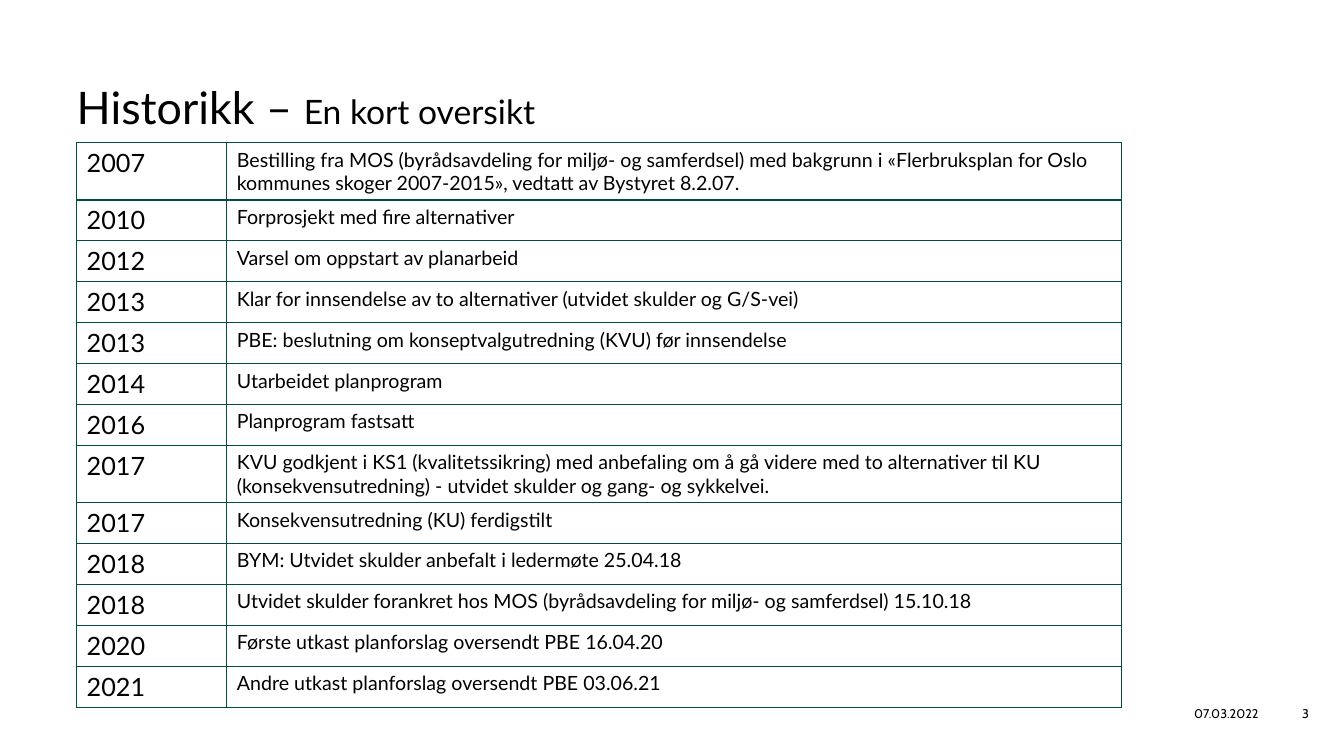
import pptx
import pptx.dml.color
import pptx.enum.text
import pptx.oxml
import pptx.oxml.ns
import pptx.util

PX = 9525
BLACK = pptx.dml.color.RGBColor(0x00, 0x00, 0x00)
WHITE = pptx.dml.color.RGBColor(0xFF, 0xFF, 0xFF)
GREEN = pptx.dml.color.RGBColor(0x03, 0x4B, 0x45)

SLIDE_SIZE = (1280, 720)
TITLE = [("Historikk – ", 32), ("En kort oversikt", 24)]
TITLE_BOX = (73, 76, 995, 74)
HISTORY = [
    ("2007", "Bestilling fra MOS (byrådsavdeling for miljø- og samferdsel) med bakgrunn i "
             "«Flerbruksplan for Oslo kommunes skoger 2007-2015», vedtatt av Bystyret 8.2.07."),
    ("2010", "Forprosjekt med fire alternativer"),
    ("2012", "Varsel om oppstart av planarbeid"),
    ("2013", "Klar for innsendelse av to alternativer (utvidet skulder og G/S-vei)"),
    ("2013", "PBE: beslutning om konseptvalgutredning (KVU) før innsendelse"),
    ("2014", "Utarbeidet planprogram"),
    ("2016", "Planprogram fastsatt"),
    ("2017", "KVU godkjent i KS1 (kvalitetssikring) med anbefaling om å gå videre med to "
             "alternativer til KU (konsekvensutredning) - utvidet skulder og gang- og sykkelvei."),
    ("2017", "Konsekvensutredning (KU) ferdigstilt"),
    ("2018", "BYM: Utvidet skulder anbefalt i ledermøte 25.04.18"),
    ("2018", "Utvidet skulder forankret hos MOS (byrådsavdeling for miljø- og samferdsel) 15.10.18"),
    ("2020", "Første utkast planforslag oversendt PBE 16.04.20"),
    ("2021", "Andre utkast planforslag oversendt PBE 03.06.21"),
]
HISTORY_LEFT, HISTORY_TOP = 73, 136
COLUMN_WIDTHS = (143, 852)
COLUMN_SIZES = (18, 14)
ROW_HEIGHT, TWO_LINE_HEIGHT = 39, 54
CHARACTERS_PER_LINE = 110
FOOTER = [
    ("07.03.2022", (1067, 660, 141, 38), pptx.enum.text.PP_ALIGN.RIGHT),
    ("3", (1207, 660, 73, 38), pptx.enum.text.PP_ALIGN.CENTER),
]


def emu(lengths):
    return [length * PX for length in lengths]


def set_font(paragraph, name, size=None):
    paragraph.font.name = name
    paragraph.font.color.rgb = BLACK
    if size:
        paragraph.font.size = pptx.util.Pt(size)


def add_borders(cell):
    """Draw a thin green line on all four sides of the cell."""
    properties = cell._tc.get_or_add_tcPr()
    for position, side in enumerate(("lnL", "lnR", "lnT", "lnB")):
        properties.insert(position, pptx.oxml.parse_xml(
            f'<a:{side} {pptx.oxml.ns.nsdecls("a")} w="{pptx.util.Pt(1)}">'
            f'<a:solidFill><a:srgbClr val="{GREEN}"/></a:solidFill></a:{side}>'))


def add_title(slide):
    title = slide.shapes.title
    title.left, title.top, title.width, title.height = emu(TITLE_BOX)
    frame = title.text_frame
    frame.margin_left = frame.margin_top = frame.margin_right = frame.margin_bottom = 0
    frame.vertical_anchor = pptx.enum.text.MSO_ANCHOR.TOP
    frame.auto_size = pptx.enum.text.MSO_AUTO_SIZE.NONE
    heading = frame.paragraphs[0]
    heading.alignment = pptx.enum.text.PP_ALIGN.LEFT
    set_font(heading, "Lato")
    for words, size in TITLE:
        run = heading.add_run()
        run.text = words
        run.font.size = pptx.util.Pt(size)


def add_history(slide):
    heights = [TWO_LINE_HEIGHT if len(event) > CHARACTERS_PER_LINE else ROW_HEIGHT
               for _, event in HISTORY]
    box = emu((HISTORY_LEFT, HISTORY_TOP, sum(COLUMN_WIDTHS), sum(heights)))
    history = slide.shapes.add_table(len(HISTORY), len(COLUMN_WIDTHS), *box).table
    history.first_row = history.horz_banding = False
    for column, width in zip(history.columns, emu(COLUMN_WIDTHS)):
        column.width = width
    for row, height, entry in zip(history.rows, emu(heights), HISTORY):
        row.height = height
        for cell, words, size in zip(row.cells, entry, COLUMN_SIZES):
            cell.text = words
            cell.fill.solid()
            cell.fill.fore_color.rgb = WHITE
            set_font(cell.text_frame.paragraphs[0], "Lato", size)
            add_borders(cell)


def add_footer(slide):
    for words, box, alignment in FOOTER:
        frame = slide.shapes.add_textbox(*emu(box)).text_frame
        frame.word_wrap = True
        frame.vertical_anchor = pptx.enum.text.MSO_ANCHOR.MIDDLE
        frame.text = words
        frame.paragraphs[0].alignment = alignment
        set_font(frame.paragraphs[0], "Cabin", 9)


def main():
    presentation = pptx.Presentation()
    presentation.slide_width, presentation.slide_height = emu(SLIDE_SIZE)
    slide = presentation.slides.add_slide(presentation.slide_layouts[5])
    add_title(slide)
    add_history(slide)
    add_footer(slide)
    presentation.save("out.pptx")


if __name__ == "__main__":
    main()
